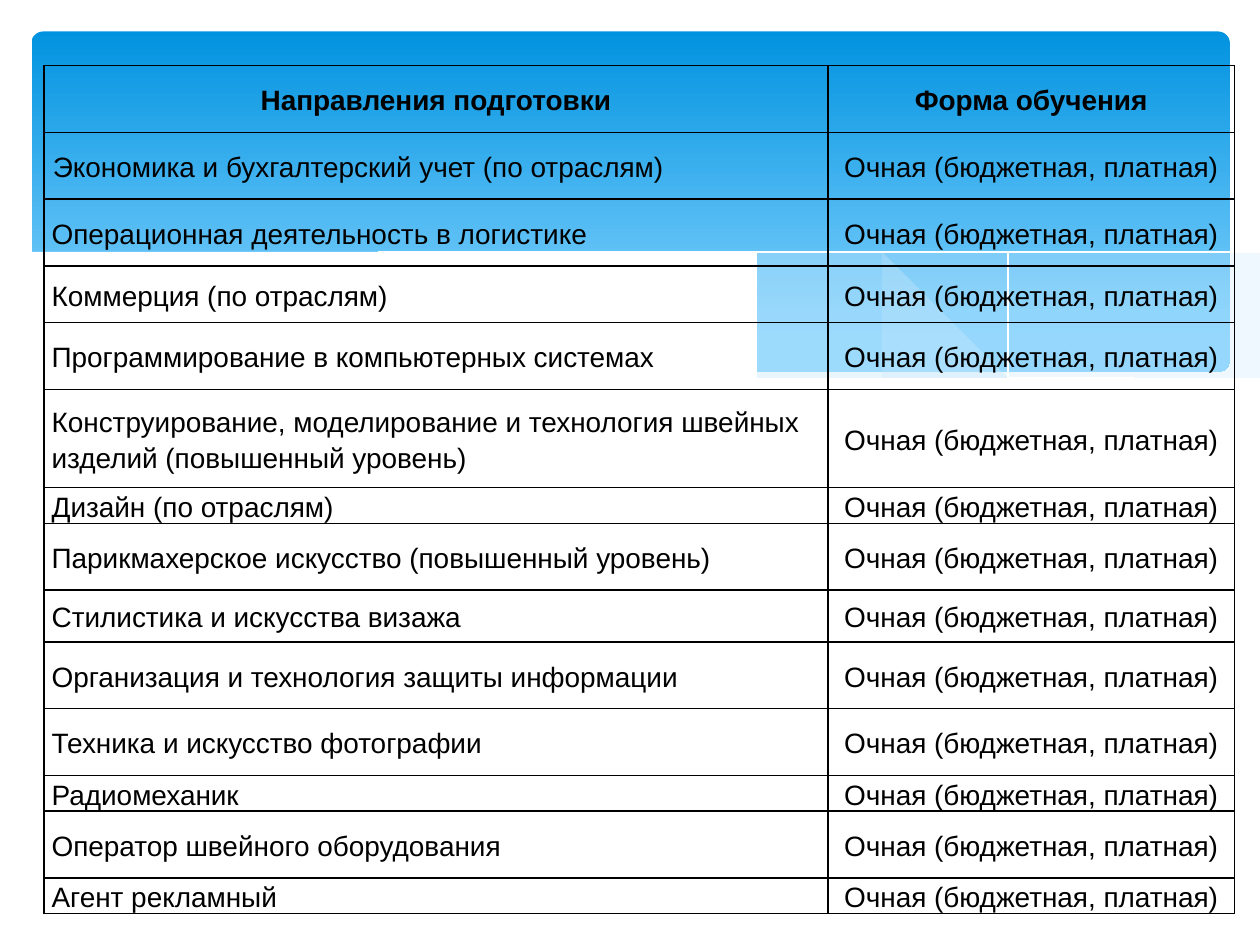
from lxml.etree import SubElement
from pptx import Presentation
from pptx.dml.color import RGBColor
from pptx.enum.shapes import MSO_SHAPE
from pptx.enum.text import MSO_ANCHOR, PP_ALIGN
from pptx.oxml.ns import qn
from pptx.util import Inches, Pt

COLORS = {"sky": "0293E0", "light_sky": "83D3FE", "mist": "C6E7FC", "white": "FFFFFF", "black": "000000"}
FONT = "Arial"
HEADINGS = ("Направления подготовки", "Форма обучения")
STUDY_FORM = "Очная (бюджетная, платная)"
HEADING_HEIGHT = 0.53
PROGRAMMES = [
    ("Экономика и бухгалтерский учет (по отраслям)", 0.53),
    ("Операционная деятельность в логистике", 0.53),
    ("Коммерция (по отраслям)", 0.45),
    ("Программирование в компьютерных системах", 0.53),
    ("Конструирование, моделирование и технология швейных изделий (повышенный уровень)", 0.78),
    ("Дизайн (по отраслям)", 0.27),
    ("Парикмахерское искусство (повышенный уровень)", 0.53),
    ("Стилистика и искусства визажа", 0.41),
    ("Организация и технология защиты информации", 0.53),
    ("Техника и искусство фотографии", 0.53),
    ("Радиомеханик", 0.27),
    ("Оператор швейного оборудования", 0.53),
    ("Агент рекламный", 0.27),
]
COLUMN_WIDTHS = (6.22, 3.23)
TABLE_LEFT, TABLE_TOP = 0.35, 0.52

RIGHT_WAVE = [
    [(9.76, 2), (9.35, 2.07), (8.61, 2.23), (7.79, 2.42), (7.06, 2.57), (6.61, 2.65)],
    [(6.61, 2.65), (7.05, 2.71), (7.57, 2.76), (8.03, 2.78), (8.54, 2.76), (8.97, 2.7),
     (9.35, 2.62), (9.76, 2.47)],
]
LONG_WAVE = [
    [(8.93, 2.73), (8.07, 2.6), (7.06, 2.4), (6.29, 2.22), (5.69, 2.08), (5.14, 1.98),
     (4.42, 1.89), (3.8, 1.85), (3.28, 1.87), (2.86, 1.91)],
    [(2.86, 1.91), (3.42, 1.99), (4.04, 2.11), (4.49, 2.22), (5.3, 2.4), (6.01, 2.55),
     (6.65, 2.66), (7.22, 2.74), (7.85, 2.78), (8.38, 2.78), (8.93, 2.73)],
]
FALLING_LINE = [[(3.09, 1.95), (3.44, 1.9), (4.01, 1.87), (4.69, 1.89), (5.33, 1.94), (6.08, 2.04),
                 (6.95, 2.19), (7.95, 2.41), (9.07, 2.72)]]
RISING_LINE = [[(6.13, 2.57), (6.95, 2.35), (7.76, 2.16), (8.66, 1.99), (9.24, 1.9), (9.75, 1.85)]]
WHITE_WAVE = [
    [(9.77, 2.46), (9.3, 2.62), (8.75, 2.73), (8.09, 2.77), (7.44, 2.74), (6.68, 2.65), (5.79, 2.5),
     (5.03, 2.33), (4.47, 2.2), (3.65, 2.02), (2.92, 1.9), (2.3, 1.85), (1.77, 1.84), (1.32, 1.86),
     (0.95, 1.91), (0.59, 1.99), (0.36, 2.07), (0.23, 2.13)],
    [(0.23, 3.29)],
    [(9.77, 3.29)],
]


def rgb(name):
    """Return the named colour."""
    return RGBColor.from_string(COLORS[name])


def smooth(knots, steps=5):
    """Return points on a Catmull-Rom curve through the knots."""
    padded = [knots[0], *knots, knots[-1]]
    points = [knots[0]]
    for a, b, c, d in zip(padded, padded[1:], padded[2:], padded[3:]):
        for step in range(1, steps + 1):
            t = step / steps
            points.append(tuple(
                (2 * q + (r - p) * t + (2 * p - 5 * q + 4 * r - s) * t ** 2
                 + (3 * q - p - 3 * r + s) * t ** 3) / 2
                for p, q, r, s in zip(a, b, c, d)))
    return points


def add_curve(slide, curves, closed):
    """Draw the joined curves as one freeform."""
    points = [point for knots in curves for point in smooth(knots)]
    builder = slide.shapes.build_freeform(*points[0], scale=Inches(1))
    builder.add_line_segments(points[1:], close=closed)
    shape = builder.convert_to_shape()
    shape.shadow.inherit = False
    return shape


def add_wave(slide, curves, color, opacity=100):
    """Draw a filled wave."""
    wave = add_curve(slide, curves, True)
    wave.fill.solid()
    wave.fill.fore_color.rgb = rgb(color)
    wave.line.fill.background()
    if opacity < 100:
        tint = wave.element.spPr.find(".//" + qn("a:srgbClr"))
        SubElement(tint, qn("a:alpha"), val=str(opacity * 1000))


def add_thin_line(slide, curves):
    """Draw a white hairline."""
    hairline = add_curve(slide, curves, False)
    hairline.fill.background()
    hairline.line.color.rgb = rgb("white")
    hairline.line.width = Pt(0)


def add_backdrop(slide):
    """Draw the blue panel and its waves."""
    panel = slide.shapes.add_shape(
        MSO_SHAPE.ROUNDED_RECTANGLE, Inches(0.25), Inches(0.25), Inches(9.51), Inches(2.7))
    panel.adjustments[0] = 0.034
    panel.shadow.inherit = False
    panel.line.fill.background()
    panel.fill.gradient()
    panel.fill.gradient_angle = 270
    for stop, color, position in zip(panel.fill.gradient_stops, ("sky", "light_sky"), (0, 0.9)):
        stop.color.rgb = rgb(color)
        stop.position = position
    add_wave(slide, RIGHT_WAVE, "mist", 29)
    add_wave(slide, LONG_WAVE, "mist", 40)
    add_thin_line(slide, FALLING_LINE)
    add_thin_line(slide, RISING_LINE)
    add_wave(slide, WHITE_WAVE, "white")


def format_cell(cell, text, bold, centered, inset):
    """Fill in one bordered, transparent cell."""
    properties = cell._tc.get_or_add_tcPr()
    for side in ("a:lnL", "a:lnR", "a:lnT", "a:lnB"):
        border = SubElement(properties, qn(side), w=str(Pt(1)))
        SubElement(SubElement(border, qn("a:solidFill")), qn("a:srgbClr"), val=COLORS["black"])
    cell.fill.background()
    cell.vertical_anchor = MSO_ANCHOR.MIDDLE
    cell.margin_left = cell.margin_right = Inches(inset)
    cell.margin_top = cell.margin_bottom = 0
    cell.text_frame.text = text
    para = cell.text_frame.paragraphs[0]
    para.alignment = PP_ALIGN.CENTER if centered else PP_ALIGN.LEFT
    para.line_spacing = 1.15
    font = para.runs[0].font
    font.name, font.size, font.bold = FONT, Pt(16), bold
    font.color.rgb = rgb("black")


def add_programme_table(slide):
    """Lay out the programmes and their forms of study."""
    rows = [HEADINGS] + [(name, STUDY_FORM) for name, _ in PROGRAMMES]
    heights = [HEADING_HEIGHT] + [height for _, height in PROGRAMMES]
    table = slide.shapes.add_table(
        len(rows), len(COLUMN_WIDTHS), Inches(TABLE_LEFT), Inches(TABLE_TOP),
        Inches(sum(COLUMN_WIDTHS)), Inches(sum(heights))).table
    table.first_row = table.horz_banding = False
    for column, width in zip(table.columns, COLUMN_WIDTHS):
        column.width = Inches(width)
    for i, (texts, height) in enumerate(zip(rows, heights)):
        table.rows[i].height = Inches(height)
        for j, text in enumerate(texts):
            heading = i == 0
            format_cell(table.cell(i, j), text, heading, heading or j == 1, 0.07 if i == 1 else 0.06)


def main():
    """Build and save the slide."""
    deck = Presentation()
    deck.slide_width, deck.slide_height = Inches(10), Inches(7.5)
    slide = deck.slides.add_slide(deck.slide_layouts[6])
    add_backdrop(slide)
    add_programme_table(slide)
    deck.save("out.pptx")


if __name__ == "__main__":
    main()
